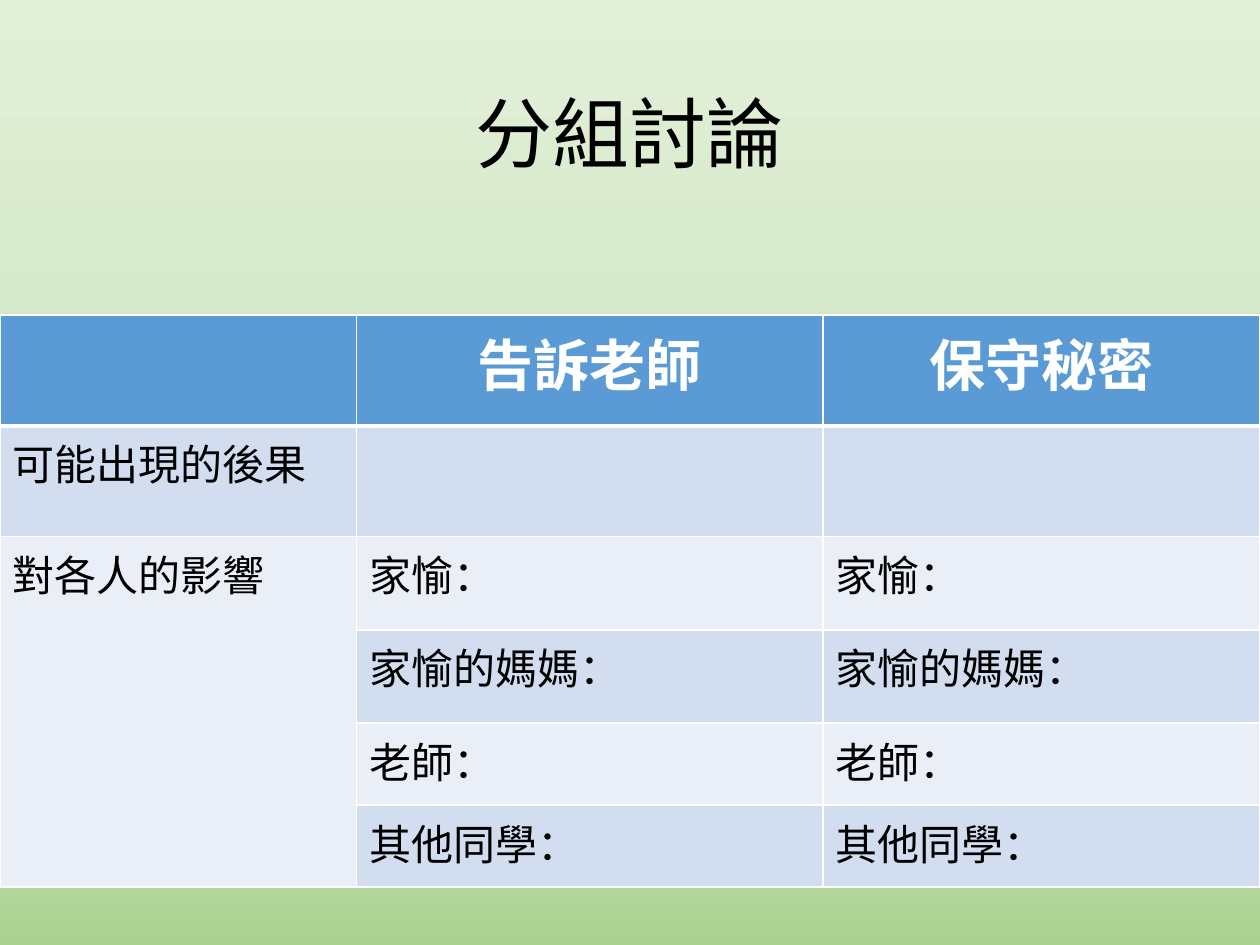
"""Builds a group discussion slide with a table comparing two choices."""
from lxml.etree import SubElement
from pptx import Presentation
from pptx.dml.color import RGBColor as RGB
from pptx.enum.text import MSO_ANCHOR as Anchor, PP_ALIGN as Align
from pptx.oxml.ns import qn
from pptx.util import Inches, Pt

COLORS = {"text": "000000", "white": "FFFFFF", "header": "5B9BD5",
          "band_dark": "D2DEEF", "band_light": "EAEFF7"}
BACKDROP = [(0, "E2F0D9"), (74, "C5E0B4"), (83, "C5E0B4"), (100, "A9D18E")]
LATIN, CJK = "Calibri", "Noto Sans CJK TC"

TITLE = "分組討論"
CHOICES = ["告訴老師", "保守秘密"]
PEOPLE = ["家愉：", "家愉的媽媽：", "老師：", "其他同學："]
ROWS = [["", *CHOICES], ["可能出現的後果", "", ""]]
ROWS += [["" if i else "對各人的影響", person, person]
         for i, person in enumerate(PEOPLE)]
COLUMN_WIDTHS = [2.83, 3.7, 3.47]
ROW_HEIGHTS = [0.88, 0.88, 0.74, 0.74, 0.65, 0.65]


def paint_backdrop(slide):
    fill = slide.background.fill
    fill.gradient()
    gradient = slide.background._cSld.find(".//" + qn("a:gradFill"))
    for part in list(gradient):
        gradient.remove(part)
    stops = SubElement(gradient, qn("a:gsLst"))
    for percent, color in BACKDROP:
        stop = SubElement(stops, qn("a:gs"), pos=str(percent * 1000))
        SubElement(stop, qn("a:srgbClr"), val=color)
    SubElement(gradient, qn("a:lin"), ang=str(90 * 60000), scaled="0")


def write(frame, text, size, color, font, align, bold=False):
    frame.text = text
    paragraph = frame.paragraphs[0]
    paragraph.alignment = align
    for run in paragraph.runs:
        run.font.size, run.font.bold, run.font.name = Pt(size), bold, font
        run.font.color.rgb = RGB.from_string(COLORS[color])
        SubElement(run.font._element, qn("a:ea"), typeface=CJK)
    return paragraph


def add_borders(cell, row):
    properties = cell._tc.get_or_add_tcPr()
    thick = {0: "B", 1: "T"}.get(row)
    for side in "LRTB":
        width = Pt(3 if side == thick else 1)
        line = SubElement(properties, qn("a:ln" + side), w=str(width))
        SubElement(SubElement(line, qn("a:solidFill")), qn("a:srgbClr"),
                   val=COLORS["white"])


def add_title(slide):
    box = slide.shapes.add_textbox(Inches(3.46), Inches(0.37), Inches(3.08), Inches(1.45))
    frame = box.text_frame
    frame.word_wrap = True
    frame.vertical_anchor = Anchor.MIDDLE
    write(frame, TITLE, 44, "text", CJK, Align.CENTER).line_spacing = 0.9


def add_comparison(slide):
    table = slide.shapes.add_table(
        len(ROWS), len(COLUMN_WIDTHS), 0, Inches(2.5),
        Inches(sum(COLUMN_WIDTHS)), Inches(sum(ROW_HEIGHTS))).table
    for column, width in zip(table.columns, COLUMN_WIDTHS):
        column.width = Inches(width)
    for r, (texts, height) in enumerate(zip(ROWS, ROW_HEIGHTS)):
        table.rows[r].height = Inches(height)
        band = "header" if r == 0 else "band_dark" if r % 2 else "band_light"
        for c, text in enumerate(texts):
            cell = table.cell(r, c)
            add_borders(cell, r)
            cell.fill.solid()
            cell.fill.fore_color.rgb = RGB.from_string(COLORS[band])
            if r == 0:
                write(cell.text_frame, text, 32, "white", LATIN, Align.CENTER, True)
            else:
                write(cell.text_frame, text, 24, "text", LATIN, Align.LEFT)
    table.cell(2, 0).merge(table.cell(len(ROWS) - 1, 0))


def main():
    deck = Presentation()
    deck.slide_width, deck.slide_height = Inches(10), Inches(7.5)
    slide = deck.slides.add_slide(deck.slide_layouts[6])
    paint_backdrop(slide)
    add_title(slide)
    add_comparison(slide)
    deck.save("out.pptx")


if __name__ == "__main__":
    main()
